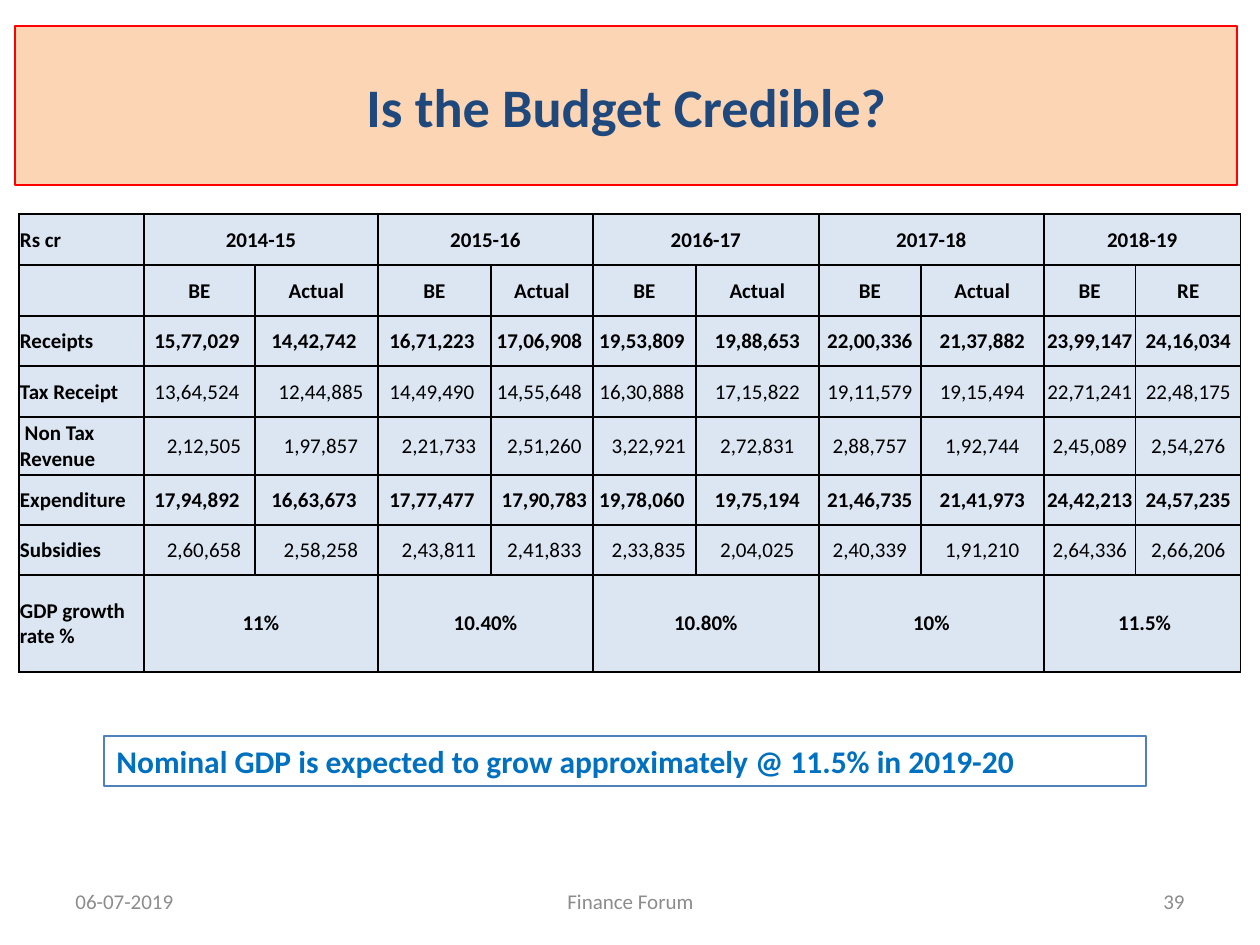
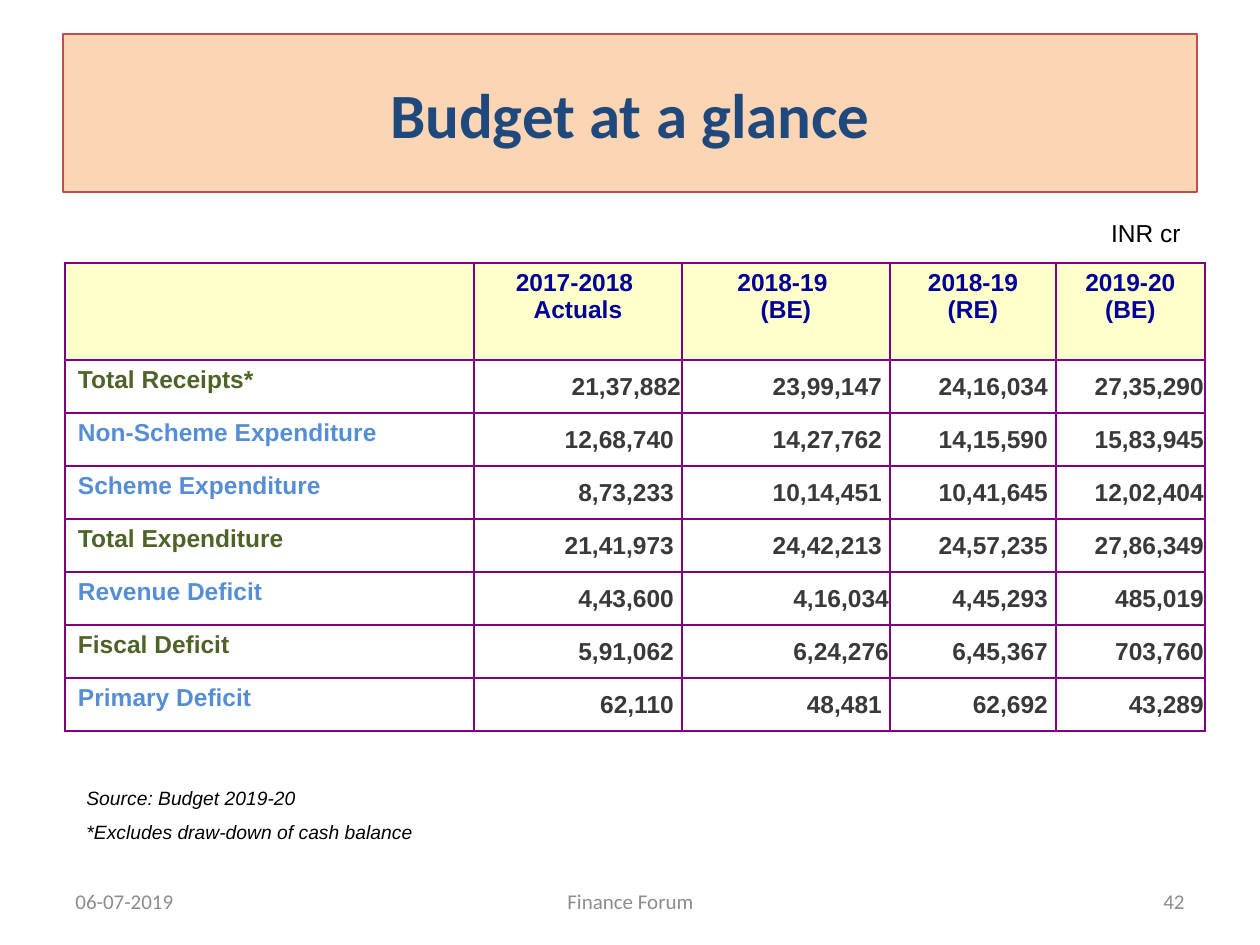
"""Build two budget slides: a five-year credibility table and a budget summary."""
from lxml import etree
from pptx import Presentation
from pptx.dml.color import RGBColor
from pptx.enum.shapes import MSO_SHAPE as Shape
from pptx.enum.text import MSO_ANCHOR as Anchor, MSO_AUTO_SIZE as AutoSize, PP_ALIGN as Align
from pptx.oxml.ns import qn
from pptx.util import Emu, Pt

PX = 914400 / 126
COLOURS = {
    "band": "FCD5B5", "title": "1F497D", "red": "FF0000", "brick": "C0504D",
    "grey": "8C8C8C", "black": "000000", "steel": "4F81BD", "callout": "0070C0",
    "pale": "DCE6F2", "cream": "FFFFCC", "purple": "800080", "navy": "000099",
    "total": "4F6228", "part": "558ED5", "figure": "3B3838",
}
TIGHT = (1, 1, 1, 0)
ROOMY = (13, 6, 13, 6)

YEARS = ["2014-15", "2015-16", "2016-17", "2017-18", "2018-19"]
GROWTH = ["11%", "10.40%", "10.80%", "10%", " 11.5%"]
CREDIBILITY_WIDTHS = [125, 111, 123, 113, 102, 103, 123, 102, 123, 92, 105]
CREDIBILITY_HEIGHTS = [51, 51, 50, 51, 58, 50, 50, 97]
CREDIBILITY_ROWS = [
    ["Receipts", "15,77,029", "14,42,742", "16,71,223", "17,06,908", "19,53,809",
     "19,88,653", "22,00,336", "21,37,882", "23,99,147", "24,16,034"],
    ["Tax Receipt", "13,64,524", "12,44,885", "14,49,490", "14,55,648", "16,30,888",
     "17,15,822", "19,11,579", "19,15,494", "22,71,241", "22,48,175"],
    [" Non Tax Revenue", "2,12,505", "1,97,857", "2,21,733", "2,51,260", "3,22,921",
     "2,72,831", "2,88,757", "1,92,744", "2,45,089", "2,54,276"],
    ["Expenditure", "17,94,892", "16,63,673", "17,77,477", "17,90,783", "19,78,060",
     "19,75,194", "21,46,735", "21,41,973", "24,42,213", "24,57,235"],
    ["Subsidies", "2,60,658", "2,58,258", "2,43,811", "2,41,833", "2,33,835",
     "2,04,025", "2,40,339", "1,91,210", "2,64,336", "2,66,206"],
]
BOLD_ROWS = {"Receipts", "Expenditure"}
NUDGES = {
    "Receipts": [-5, -5, -5, -5, -5],
    "Tax Receipt": [-5, 9, -5, -5, -5],
    " Non Tax Revenue": [9, 9, 9, 5, 9],
    "Expenditure": [-5, -5, -5, 5, -5],
    "Subsidies": [9, 9, 9, 5, 9],
}

GLANCE_HEADS = ["", "2017-2018 \nActuals", "2018-19 \n(BE)", "2018-19 (RE)", "2019-20 (BE)"]
GLANCE_WIDTHS = [409, 208, 208, 166, 149]
GLANCE_HEIGHTS = [97] + [53] * 7
GLANCE_ROWS = [
    ["Total Receipts*", "21,37,882", "23,99,147", "24,16,034", "27,35,290"],
    ["Non-Scheme Expenditure", "12,68,740", "14,27,762", "14,15,590", "15,83,945"],
    ["Scheme Expenditure", "8,73,233", "10,14,451", "10,41,645", "12,02,404"],
    ["Total Expenditure", "21,41,973", "24,42,213", "24,57,235", "27,86,349"],
    ["Revenue Deficit", "4,43,600", "4,16,034", "4,45,293", "485,019"],
    ["Fiscal Deficit", "5,91,062", "6,24,276", "6,45,367", "703,760"],
    ["Primary Deficit", "62,110", "48,481", "62,692", "43,289"],
]
TOTALS = {"Total Receipts*", "Total Expenditure", "Fiscal Deficit"}
FLUSH_FIGURES = {"21,37,882", "4,16,034", "6,24,276"}


def px(count):
    """Turn whole pixels into EMU."""
    return Emu(round(count * PX))


def colour(name):
    """Look up a named colour."""
    return RGBColor.from_string(COLOURS[name])


def write(frame, text, size, ink, font="Calibri", bold=False, italic=False, align=Align.LEFT):
    """Fill a text frame and format every run alike."""
    frame.text = text
    for para in frame.paragraphs:
        para.alignment = align
        for span in para.runs:
            span.font.size = Pt(size)
            span.font.name = font
            span.font.bold = bold
            span.font.italic = italic
            span.font.color.rgb = colour(ink)


def place(shape, area):
    """Move and size a shape to a pixel area."""
    shape.left, shape.top, shape.width, shape.height = map(px, area)


def outline(shape, ink):
    """Give a shape a thin coloured line."""
    shape.line.color.rgb = colour(ink)
    shape.line.width = Pt(0.75)


def add_page(deck, title, area, size, edge, number):
    """Add a slide with its title band and footer."""
    page = deck.slides.add_slide(deck.slide_layouts[5])
    band = page.shapes.title
    place(band, area)
    band.fill.solid()
    band.fill.fore_color.rgb = colour("band")
    outline(band, edge)
    write(band.text_frame, title, size, "title", bold=True, align=Align.CENTER)
    band.text_frame.auto_size = AutoSize.NONE
    band.text_frame.vertical_anchor = Anchor.MIDDLE
    footer = [("06-07-2019", 63, 294, Align.LEFT), ("Finance Forum", 431, 399, Align.CENTER),
              (number, 903, 294, Align.RIGHT)]
    for text, left, width, align in footer:
        box = add_text(page, (left, 876, width, 50), text, 12, "grey", align=align)
        box.text_frame.vertical_anchor = Anchor.MIDDLE
    return page


def add_text(page, area, text, size, ink, **style):
    """Add a wrapping text box."""
    box = page.shapes.add_textbox(*map(px, area))
    box.text_frame.word_wrap = True
    write(box.text_frame, text, size, ink, **style)
    return box


def add_callout(page, area, text):
    """Add an outlined box with a bold statement."""
    box = page.shapes.add_shape(Shape.RECTANGLE, *map(px, area))
    box.shadow.inherit = False
    box.fill.background()
    outline(box, "steel")
    write(box.text_frame, text, 18, "callout", bold=True)
    box.text_frame.vertical_anchor = Anchor.TOP


def add_grid(page, left, top, widths, heights, edge, fill=None):
    """Add a plain table with bordered cells of one fill."""
    area = (left, top, sum(widths), sum(heights))
    table = page.shapes.add_table(len(heights), len(widths), *map(px, area)).table
    table.first_row = table.horz_banding = False
    for column, width in zip(table.columns, widths):
        column.width = px(width)
    for row, height in zip(table.rows, heights):
        row.height = px(height)
    for cell in table.iter_cells():
        add_borders(cell, edge)
        paint(cell, fill)
    return table


def add_borders(cell, ink):
    """Draw a one-point line on all four sides of a cell."""
    properties = cell._tc.get_or_add_tcPr()
    for side in ("a:lnL", "a:lnR", "a:lnT", "a:lnB"):
        line = etree.SubElement(properties, qn(side), w=str(Pt(1)))
        solid = etree.SubElement(line, qn("a:solidFill"))
        etree.SubElement(solid, qn("a:srgbClr"), val=COLOURS[ink])


def paint(cell, fill):
    """Fill a cell, or clear it when no colour is given."""
    if fill:
        cell.fill.solid()
        cell.fill.fore_color.rgb = colour(fill)
    else:
        cell.fill.background()


def set_cell(cell, text, size, ink, insets=TIGHT, anchor=Anchor.MIDDLE, **style):
    """Write one table cell with its insets and anchor."""
    cell.margin_left, cell.margin_top, cell.margin_right, cell.margin_bottom = map(px, insets)
    cell.vertical_anchor = anchor
    write(cell.text_frame, text, size, ink, **style)


def fill_credibility(table):
    """Fill the estimate and actual figures by year."""
    def put(row, column, text, bold=True, nudge=0):
        """Write a cell, shifted sideways by its insets."""
        align = Align.CENTER if column else Align.LEFT
        insets = (1 + max(nudge, 0), 1, 1 + max(-nudge, 0), 0)
        set_cell(table.cell(row, column), text, 12, "black", insets, bold=bold, align=align)

    last = len(CREDIBILITY_HEIGHTS) - 1
    put(0, 0, "Rs cr")
    put(last, 0, "GDP growth rate %")
    for index, (year, growth) in enumerate(zip(YEARS, GROWTH)):
        column = 1 + 2 * index
        for row, text in ((0, year), (last, growth)):
            table.cell(row, column).merge(table.cell(row, column + 1))
            put(row, column, text)
        put(1, column, "BE")
        put(1, column + 1, "RE" if year == YEARS[-1] else "Actual")
    for row, (label, *figures) in enumerate(CREDIBILITY_ROWS, 2):
        put(row, 0, label)
        nudges = NUDGES[label] + [0] * 5
        for column, (figure, nudge) in enumerate(zip(figures, nudges), 1):
            put(row, column, figure, label in BOLD_ROWS, nudge)


def fill_glance(table):
    """Fill the budget summary with its header row."""
    style = {"font": "Arial", "bold": True}
    for column, head in enumerate(GLANCE_HEADS):
        cell = table.cell(0, column)
        set_cell(cell, head, 14, "navy", ROOMY, Anchor.TOP, align=Align.CENTER, **style)
        paint(cell, "cream")
    for row, (label, *figures) in enumerate(GLANCE_ROWS, 1):
        ink = "total" if label in TOTALS else "part"
        set_cell(table.cell(row, 0), label, 14, ink, ROOMY, Anchor.TOP, **style)
        for column, figure in enumerate(figures, 1):
            flush = column == len(figures) or figure in FLUSH_FIGURES
            insets = TIGHT if flush else (1, 1, 8, 0)
            set_cell(table.cell(row, column), figure, 14, "figure", insets,
                     align=Align.RIGHT, **style)


def main():
    """Build and save the deck."""
    deck = Presentation()
    deck.slide_width, deck.slide_height = px(1260), px(945)

    page = add_page(deck, "Is the Budget Credible?", (15, 26, 1222, 159), 31, "red", "39")
    fill_credibility(add_grid(page, 19, 214, CREDIBILITY_WIDTHS, CREDIBILITY_HEIGHTS,
                              "black", "pale"))
    add_callout(page, (104, 736, 1042, 50),
                "Nominal GDP is expected to grow approximately @ 11.5% in 2019-20")

    page = add_page(deck, "Budget at a glance", (63, 34, 1134, 158), 36, "brick", "42")
    add_text(page, (931, 212, 262, 43), "INR cr", 14, "black", font="Arial", align=Align.RIGHT)
    fill_glance(add_grid(page, 65, 263, GLANCE_WIDTHS, GLANCE_HEIGHTS, "purple"))
    notes = add_text(page, (74, 780, 987, 71),
                     "Source: Budget 2019-20\n*Excludes draw-down of cash balance",
                     11, "black", font="Arial", italic=True)
    notes.text_frame.paragraphs[0].space_after = Pt(6)

    deck.save("out.pptx")


if __name__ == "__main__":
    main()
